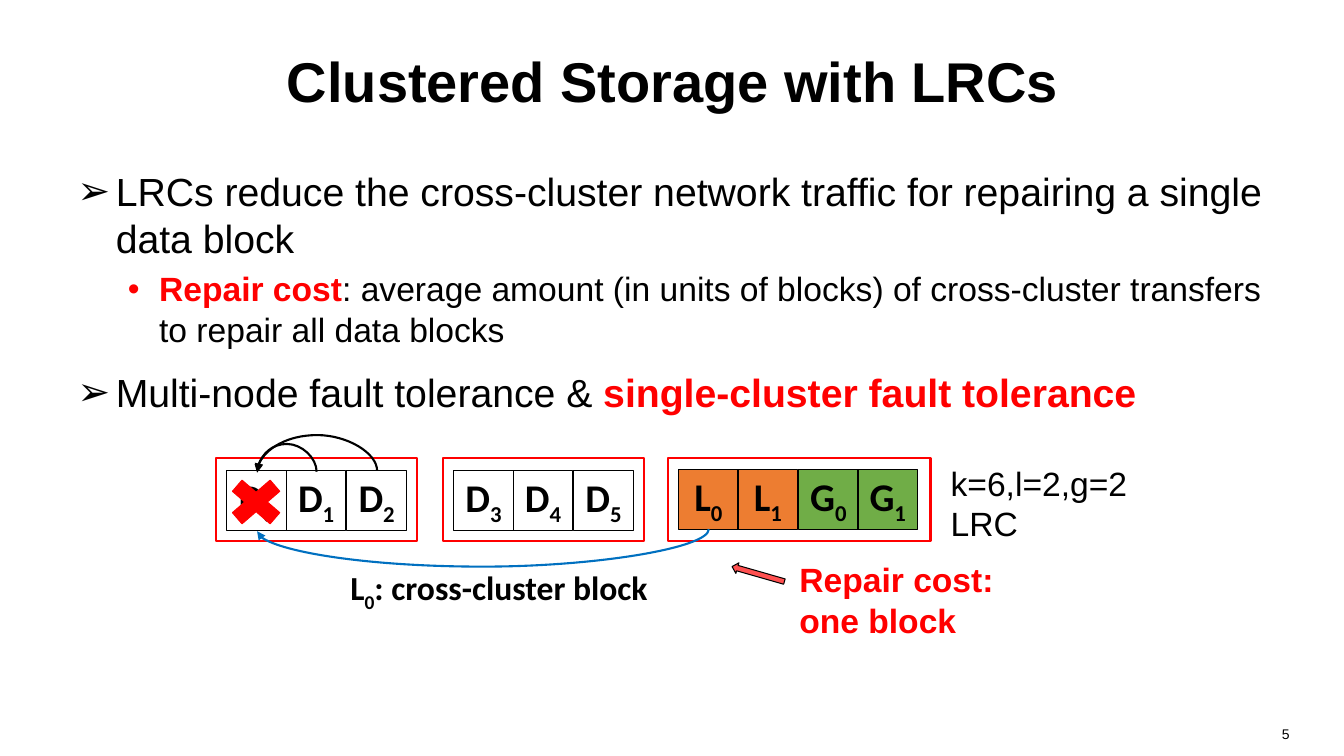
from lxml.etree import SubElement
from pptx import Presentation
from pptx.dml.color import RGBColor
from pptx.enum.shapes import MSO_CONNECTOR, MSO_SHAPE
from pptx.enum.text import MSO_ANCHOR, PP_ALIGN
from pptx.oxml.ns import qn
from pptx.util import Pt

PX = 9144
COLORS = {
    "black": "000000",
    "red": "FF0000",
    "arrow": "FF5050",
    "blue": "0070C0",
    "local": "ED7D31",
    "global": "70AD47",
}


def px(n):
    return int(n * PX)


def rgb(name):
    return RGBColor.from_string(COLORS[name])


class Deck:
    def __init__(self, prs):
        self.slide = prs.slides.add_slide(prs.slide_layouts[6])
        self.shapes = self.slide.shapes

    def add_runs(self, p, runs, size, font="Arial", bold=False, color="black", align=None):
        p.alignment = align
        for text, kind in runs:
            r = p.add_run()
            r.text = text
            r.font.name = font
            r.font.size = Pt(size)
            r.font.bold = bold or kind == "key"
            r.font.color.rgb = rgb("red" if kind == "key" else color)
            if kind == "sub":
                r.font._element.set("baseline", "-25000")

    def text(self, box, lines, size, anchor=MSO_ANCHOR.TOP, **style):
        tf = self.shapes.add_textbox(*map(px, box)).text_frame
        tf.word_wrap = True
        tf.vertical_anchor = anchor
        for i, runs in enumerate(lines):
            p = tf.add_paragraph() if i else tf.paragraphs[0]
            self.add_runs(p, runs, size, **style)

    def bullets(self, box, items):
        tf = self.shapes.add_textbox(*map(px, box)).text_frame
        tf.word_wrap = True
        levels = [("➢", 28, 38, 38, 14), ("•", 24, 81, 31, 5)]
        for i, (level, runs) in enumerate(items):
            char, size, margin, hang, before = levels[level]
            p = tf.add_paragraph() if i else tf.paragraphs[0]
            p.level = level
            p.space_before = Pt(before)
            self.add_runs(p, runs, size)
            pPr = p._p.get_or_add_pPr()
            pPr.set("marL", str(px(margin)))
            pPr.set("indent", str(px(-hang)))
            SubElement(pPr, qn("a:buFont")).set("typeface", "Arial")
            SubElement(pPr, qn("a:buChar")).set("char", char)

    def shape(self, kind, box, fill=None, line="black", width=0.75, rotation=0):
        sp = self.shapes.add_shape(kind, *map(px, box))
        sp.shadow.inherit = False
        sp.rotation = rotation
        if fill:
            sp.fill.solid()
            sp.fill.fore_color.rgb = rgb(fill)
        else:
            sp.fill.background()
        sp.line.color.rgb = rgb(line)
        sp.line.width = Pt(width)
        return sp

    def block(self, x, y, letter, index, fill):
        sp = self.shape(MSO_SHAPE.RECTANGLE, (x, y, 59, 59), fill)
        tf = sp.text_frame
        tf.word_wrap = False
        tf.vertical_anchor = MSO_ANCHOR.MIDDLE
        self.add_runs(tf.paragraphs[0], [(letter, None), (index, "sub")], 28,
                      font="Calibri", bold=True, align=PP_ALIGN.CENTER)

    def arc(self, start, end, depth, color):
        (x1, y1), (x2, y2) = start, end
        w, h = y2 - y1, x1 - x2
        left, top = (x1 + x2 - w) / 2, (y1 + y2 - h) / 2
        cxn = self.shapes.add_connector(
            MSO_CONNECTOR.CURVE, px(left), px(top), px(left + w), px(top + h))
        cxn.line.color.rgb = rgb(color)
        cxn.line.width = Pt(1.5)
        spPr = cxn._element.spPr
        spPr.find(qn("a:xfrm")).set("rot", "5400000")
        geom = spPr.find(qn("a:prstGeom"))
        av = geom.find(qn("a:avLst"))
        if av is None:
            av = SubElement(geom, qn("a:avLst"))
        gd = SubElement(av, qn("a:gd"))
        gd.set("name", "adj1")
        gd.set("fmla", f"val {depth * 100000 // w}")
        SubElement(spPr.find(qn("a:ln")), qn("a:tailEnd")).set("type", "triangle")
        SubElement(spPr, qn("a:effectLst"))


def main():
    prs = Presentation()
    prs.slide_width, prs.slide_height = px(1333), px(750)
    deck = Deck(prs)

    deck.text((67, 17, 1200, 125), [[("Clustered Storage with LRCs", None)]], 40,
              anchor=MSO_ANCHOR.MIDDLE, bold=True, align=PP_ALIGN.CENTER)
    deck.text((978, 715, 311, 35), [[("5", None)]], 10, align=PP_ALIGN.RIGHT)
    deck.bullets((67, 161, 1200, 322), [
        (0, [("LRCs reduce the cross-cluster network traffic for repairing a single data block", None)]),
        (1, [("Repair cost", "key"),
             (": average amount (in units of blocks) of cross-cluster transfers to repair all data blocks", None)]),
        (0, [("Multi-node fault tolerance & ", None), ("single-cluster fault tolerance", "key")]),
    ])

    fills = {"D": None, "L": "local", "G": "global"}
    clusters = [
        (214, 200, 225, 467, ["D0", "D1", "D2"]),
        (439, 200, 450, 467, ["D3", "D4", "D5"]),
        (663, 260, 673, 466, ["L0", "L1", "G0", "G1"]),
    ]
    for frame_x, frame_w, x, y, names in clusters:
        for i, (letter, index) in enumerate(names):
            deck.block(x + i * 119 // 2, y, letter, index, fills[letter])
        deck.shape(MSO_SHAPE.RECTANGLE, (frame_x, 454, frame_w, 83), line="red", width=1.5)
    deck.shape(MSO_SHAPE.MATH_MULTIPLY, (218, 467, 72, 62), "red", "red")

    deck.arc((703, 525), (255, 527), 37, "blue")
    deck.arc((314, 468), (255, 469), -28, "black")
    deck.arc((374, 467), (255, 468), -36, "black")

    deck.text((301, 558, 388, 50),
              [[("L", None), ("0", "sub"), (": cross-cluster block", None)]], 24,
              font="Calibri", bold=True, align=PP_ALIGN.CENTER)
    deck.text((783, 550, 218, 91), [[("Repair cost:", None)], [("one block", None)]], 24,
              bold=True, color="red")
    deck.shape(MSO_SHAPE.RIGHT_ARROW, (725, 564, 54, 11), "arrow", rotation=196)
    deck.text((933, 454, 198, 91), [[("k=6,l=2,g=2 LRC", None)]], 24)

    prs.save("out.pptx")


if __name__ == "__main__":
    main()
